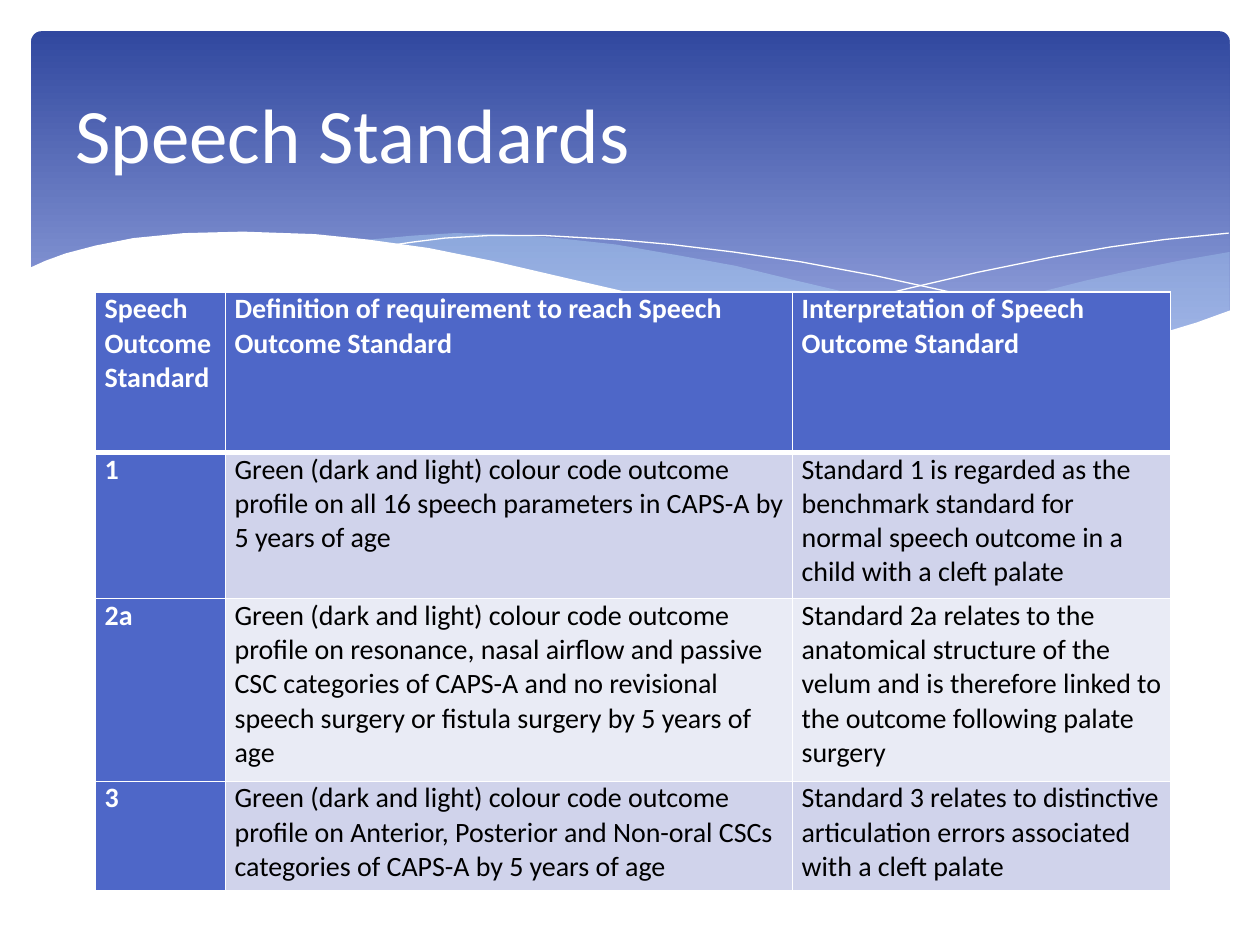
import pptx
import pptx.util
import pptx.dml.color
import pptx.enum.shapes
import pptx.enum.text
import pptx.oxml
import pptx.oxml.ns
from pptx.util import Cm

RGB = pptx.dml.color.RGBColor
WHITE = RGB(0xFF, 0xFF, 0xFF)
BLACK = RGB(0x00, 0x00, 0x00)
BLUE = RGB(0x4E, 0x67, 0xC8)
DEEP_BLUE = RGB(0x31, 0x48, 0x9F)
SOFT_BLUE = RGB(0x95, 0xA4, 0xDE)
SKY = RGB(0xB4, 0xDC, 0xFA)
BAND_DARK = RGB(0xD0, 0xD3, 0xEB)
BAND_LIGHT = RGB(0xE9, 0xEB, 0xF5)


def write_text(frame, text, size=16, color=BLACK, bold=False):
    para = frame.paragraphs[0]
    para.alignment = pptx.enum.text.PP_ALIGN.LEFT
    span = para.add_run()
    span.text = text
    span.font.name = "Calibri"
    span.font.size = pptx.util.Pt(size)
    span.font.bold = bold
    span.font.color.rgb = color


def draw_curve(page, points, fill=None, alpha=100):
    """Draw points given in cm: a filled area, or a thin white line without fill."""
    corners = [(Cm(x), Cm(y)) for x, y in points]
    builder = page.shapes.build_freeform(*corners[0])
    builder.add_line_segments(corners[1:], close=fill is not None)
    curve = builder.convert_to_shape()
    curve.shadow.inherit = False
    if fill is None:
        curve.fill.background()
        curve.line.color.rgb = WHITE
        curve.line.width = 0
        return
    curve.fill.solid()
    curve.fill.fore_color.rgb = fill
    curve.line.fill.background()
    if alpha < 100:
        color = curve.element.find(".//" + pptx.oxml.ns.qn("a:srgbClr"))
        color.append(pptx.oxml.parse_xml(
            f'<a:alpha {pptx.oxml.ns.nsdecls("a")} val="{alpha * 1000}"/>'))


deck = pptx.Presentation()
deck.slide_width, deck.slide_height = Cm(25.4), Cm(19.05)
page = deck.slides.add_slide(deck.slide_layouts[5])

# Banner with gradient
banner = page.shapes.add_shape(
    pptx.enum.shapes.MSO_SHAPE.ROUNDED_RECTANGLE,
    Cm(0.63), Cm(0.63), Cm(24.16), Cm(6.86))
banner.adjustments[0] = 0.03
banner.shadow.inherit = False
banner.line.fill.background()
banner.fill.gradient()
banner.fill.gradient_angle = 270
for stop, position, color in zip(
        banner.fill.gradient_stops, (0, 0.9), (DEEP_BLUE, SOFT_BLUE)):
    stop.position = position
    stop.color.rgb = color

# Translucent waves
right_wave = [
    (24.79, 5.08), (23.75, 5.26), (22.63, 5.49), (21.87, 5.66), (20.45, 6.02),
    (19.13, 6.3), (17.93, 6.53), (16.79, 6.73), (17.91, 6.88), (18.92, 6.99),
    (20.12, 7.04), (20.68, 7.06), (21.69, 7.01), (22.58, 6.91), (23.39, 6.73),
    (24.1, 6.53), (24.79, 6.27)]
middle_wave = [
    (22.68, 6.93), (21.26, 6.73), (19.69, 6.45), (17.93, 6.1), (15.98, 5.64),
    (14.83, 5.36), (13.74, 5.16), (12.42, 4.93), (11.23, 4.8), (10.13, 4.72),
    (9.17, 4.7), (8.33, 4.75), (7.26, 4.85), (8.69, 5.05), (10.26, 5.36),
    (11.4, 5.64), (13.46, 6.1), (15.27, 6.48), (16.89, 6.76), (18.34, 6.96),
    (19.94, 7.06), (21.29, 7.06)]
draw_curve(page, right_wave, fill=SKY, alpha=29)
draw_curve(page, middle_wave, fill=SKY, alpha=40)

# Thin white lines
falling_line = [
    (7.85, 4.95), (8.33, 4.88), (8.97, 4.8), (9.83, 4.75), (11, 4.75),
    (12.42, 4.83), (13.54, 4.93), (14.78, 5.08), (16.15, 5.28), (17.65, 5.56),
    (19.3, 5.92), (21.11, 6.38), (23.04, 6.91)]
rising_line = [
    (15.57, 6.53), (17.07, 6.12), (18.29, 5.82), (19.71, 5.49), (21.23, 5.18),
    (22.38, 4.98), (23.47, 4.83), (24.77, 4.7)]
draw_curve(page, falling_line)
draw_curve(page, rising_line)

# White wave that cuts off the banner
white_wave = [
    (0.58, 5.41), (0.91, 5.26), (1.32, 5.11), (1.93, 4.95), (2.69, 4.8),
    (3.71, 4.7), (4.9, 4.67), (6.35, 4.72), (7.42, 4.83), (8.64, 5),
    (9.93, 5.26), (11.35, 5.59), (12.78, 5.92), (14.1, 6.22), (15.32, 6.45),
    (16.46, 6.65), (17.48, 6.81), (18.44, 6.91), (19.33, 6.99), (20.55, 7.04),
    (21.59, 6.99), (22.53, 6.88), (23.37, 6.73), (24.13, 6.5), (24.82, 6.25),
    (24.82, 8.36), (0.58, 8.36)]
draw_curve(page, white_wave, fill=WHITE)

# Table of standards
rows = [
    ("Speech Outcome Standard",
     "Definition of requirement to reach Speech Outcome Standard",
     "Interpretation of Speech Outcome Standard"),
    ("1",
     "Green (dark and light) colour code outcome profile on all 16 speech "
     "parameters in CAPS-A by 5 years of age",
     "Standard 1 is regarded as the benchmark standard for normal speech "
     "outcome in a child with a cleft palate"),
    ("2a",
     "Green (dark and light) colour code outcome profile on resonance, nasal "
     "airflow and passive CSC categories of CAPS-A and no revisional speech "
     "surgery or fistula surgery by 5 years of age",
     "Standard 2a relates to the anatomical structure of the velum and is "
     "therefore linked to the outcome following palate surgery"),
    ("3",
     "Green (dark and light) colour code outcome profile on Anterior, Posterior "
     "and Non-oral CSCs categories of CAPS-A by 5 years of age",
     "Standard 3 relates to distinctive articulation errors associated with a "
     "cleft palate"),
]
widths = [2.62, 11.43, 7.62]
heights = [3.23, 2.95, 3.68, 2.21]
table = page.shapes.add_table(
    len(rows), len(widths), Cm(1.93), Cm(5.89),
    Cm(sum(widths)), Cm(sum(heights))).table
for column, width in zip(table.columns, widths):
    column.width = Cm(width)
for row, height in zip(table.rows, heights):
    row.height = Cm(height)

for r, texts in enumerate(rows):
    for c, text in enumerate(texts):
        cell = table.cell(r, c)
        heading = r == 0 or c == 0
        cell.margin_left = cell.margin_right = Cm(0.18)
        cell.margin_top = cell.margin_bottom = 0
        write_text(cell.text_frame, text, bold=heading,
                   color=WHITE if heading else BLACK)
        # Borders: the edge below the header row is thicker
        properties = cell.fill and cell._tc.get_or_add_tcPr()
        for side in "LRTB":
            thick = (r, side) in ((0, "B"), (1, "T"))
            properties.append(pptx.oxml.parse_xml(
                f'<a:ln{side} {pptx.oxml.ns.nsdecls("a")} '
                f'w="{pptx.util.Pt(3 if thick else 1)}"><a:solidFill>'
                f'<a:srgbClr val="{WHITE}"/></a:solidFill></a:ln{side}>'))
        cell.fill.solid()
        cell.fill.fore_color.rgb = (
            BLUE if heading else BAND_DARK if r % 2 else BAND_LIGHT)

# Title, brought in front of the banner
title = page.shapes.title
title.left, title.top, title.width, title.height = (
    Cm(1.27), Cm(0.94), Cm(22.86), Cm(3.48))
title.text_frame.vertical_anchor = pptx.enum.text.MSO_ANCHOR.MIDDLE
write_text(title.text_frame, "Speech Standards", size=44, color=WHITE)
page.shapes.element.append(title.element)

deck.save("out.pptx")
